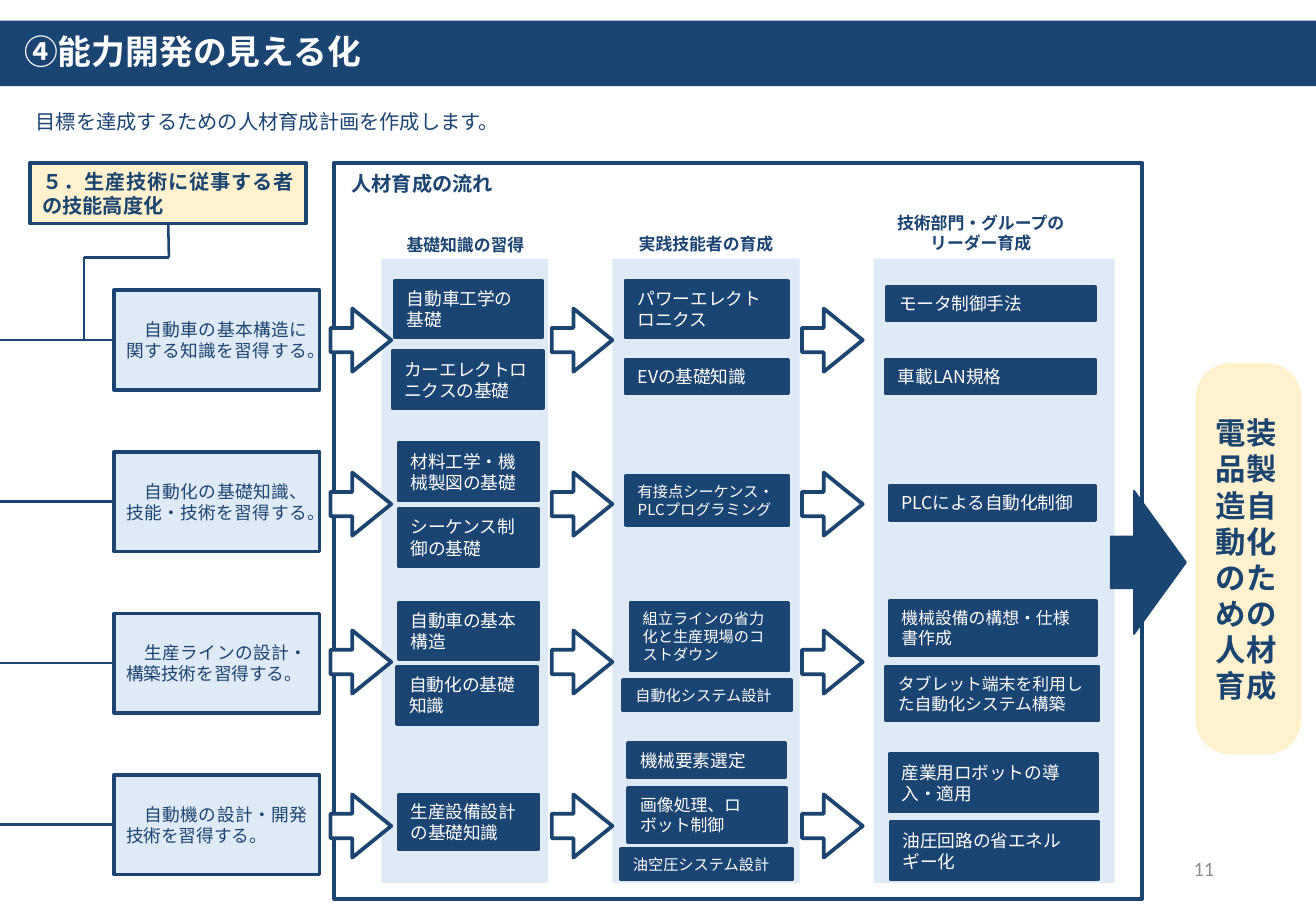
from dataclasses import dataclass
from typing import Any, Optional

from lxml.etree import SubElement
from pptx import Presentation
from pptx.dml.color import RGBColor
from pptx.enum.shapes import MSO_CONNECTOR, MSO_SHAPE
from pptx.enum.text import MSO_ANCHOR, PP_ALIGN
from pptx.oxml.ns import qn
from pptx.shapes.autoshape import Shape
from pptx.shapes.connector import Connector
from pptx.slide import Slide
from pptx.util import Inches, Pt


@dataclass(frozen=True)
class Theme:
    navy: str = "1A4472"
    pale: str = "DEEBF7"
    cream: str = "FFF2CC"
    white: str = "FFFFFF"
    grey: str = "8C8C8C"
    font: str = "Noto Sans CJK JP"
    number_font: str = "Calibri"
    title: float = 20
    outcome: float = 18
    lead: float = 12
    body: float = 10.5
    head: float = 10
    small: float = 9
    leading: float = 1.19
    border: float = 2.25
    wire: float = 1.5


T = Theme()


@dataclass(frozen=True)
class Box:
    x: float
    y: float
    w: float
    h: float


@dataclass(frozen=True)
class Text:
    text: str
    size: float = T.body
    color: str = T.navy
    bold: bool = False
    align: Optional[PP_ALIGN] = None
    anchor: MSO_ANCHOR = MSO_ANCHOR.MIDDLE
    font: str = T.font
    wrap: bool = True


@dataclass(frozen=True)
class Stage:
    band: Box
    head: Box
    title: str


@dataclass(frozen=True)
class Skill:
    box: Box
    text: str
    size: float = T.body


STAGES = [
    Stage(Box(3.14, 2.13, 1.37, 5.14), Box(3.15, 1.88, 1.36, 0.27), "基礎知識の習得"),
    Stage(Box(5.04, 2.13, 1.54, 5.14), Box(5.13, 1.87, 1.36, 0.27), "実践技能者の育成"),
    Stage(Box(7.19, 2.13, 1.98, 5.14), Box(7.21, 1.7, 1.72, 0.44),
          "技術部門・グループの\nリーダー育成"),
]
GOALS = [
    "　自動車の基本構造に関する知識を習得する。",
    "　自動化の基礎知識、技能・技術を習得する。",
    "　生産ラインの設計・構築技術を習得する。",
    "　自動機の設計・開発技術を習得する。",
]
ARROW_X = [2.72, 4.54, 6.6]
ARROW_Y = [2.54, 3.89, 5.19, 6.54]
SKILLS = [
    Skill(Box(3.25, 2.31, 1.21, 0.47), "自動車工学の基礎"),
    Skill(Box(3.23, 2.89, 1.24, 0.47), "カーエレクトロニクスの基礎"),
    Skill(Box(3.28, 3.65, 1.15, 0.47), "材料工学・機械製図の基礎"),
    Skill(Box(3.28, 4.19, 1.15, 0.47), "シーケンス制御の基礎"),
    Skill(Box(3.28, 4.96, 1.15, 0.47), "自動車の基本構造"),
    Skill(Box(3.27, 5.49, 1.15, 0.47), "自動化の基礎知識"),
    Skill(Box(3.28, 6.54, 1.15, 0.45), "生産設備設計の基礎知識"),
    Skill(Box(5.15, 2.31, 1.34, 0.47), "パワーエレクトロニクス"),
    Skill(Box(5.15, 2.96, 1.34, 0.28), "EVの基礎知識"),
    Skill(Box(5.15, 3.92, 1.34, 0.4), "有接点シーケンス・PLCプログラミング", T.small),
    Skill(Box(5.19, 4.96, 1.3, 0.56), "組立ラインの省力化と生産現場のコストダウン", T.small),
    Skill(Box(5.13, 5.6, 1.38, 0.25), "自動化システム設計", T.small),
    Skill(Box(5.17, 6.12, 1.29, 0.28), "機械要素選定"),
    Skill(Box(5.17, 6.49, 1.3, 0.44), "画像処理、ロボット制御", T.head),
    Skill(Box(5.11, 6.99, 1.41, 0.25), "油空圧システム設計", T.small),
    Skill(Box(7.3, 2.36, 1.71, 0.28), "モータ制御手法"),
    Skill(Box(7.29, 2.96, 1.72, 0.28), "車載LAN規格"),
    Skill(Box(7.32, 4, 1.69, 0.28), "PLCによる自動化制御"),
    Skill(Box(7.32, 4.95, 1.7, 0.44), "機械設備の構想・仕様書作成", T.head),
    Skill(Box(7.29, 5.49, 1.75, 0.44), "タブレット端末を利用した自動化システム構築", T.head),
    Skill(Box(7.32, 6.21, 1.71, 0.47), "産業用ロボットの導入・適用"),
    Skill(Box(7.33, 6.77, 1.71, 0.47), "油圧回路の省エネルギー化"),
]


def apply(obj: Any, values: dict[str, Any]) -> None:
    """Set each named attribute on the object."""
    for name, value in values.items():
        setattr(obj, name, value)


def inches(b: Box) -> tuple:
    """Return the box as lengths for a shape call."""
    return Inches(b.x), Inches(b.y), Inches(b.w), Inches(b.h)


def write(sp: Shape, t: Text) -> None:
    """Fill a shape with formatted paragraphs."""
    tf = sp.text_frame
    apply(tf, {"word_wrap": t.wrap, "vertical_anchor": t.anchor})
    for i, line in enumerate(t.text.split("\n")):
        p = tf.add_paragraph() if i else tf.paragraphs[0]
        apply(p, {"alignment": t.align or PP_ALIGN.LEFT,
                  "line_spacing": Pt(t.size * T.leading)})
        r = p.add_run()
        r.text = line
        apply(r.font, {"name": t.font, "size": Pt(t.size), "bold": t.bold})
        r.font.color.rgb = RGBColor.from_string(t.color)
        SubElement(r._r.get_or_add_rPr(), qn("a:ea"), typeface=t.font)


def add_label(s: Slide, b: Box, t: Text) -> Shape:
    """Add a text box."""
    sp = s.shapes.add_textbox(*inches(b))
    write(sp, t)
    return sp


def add_block(s: Slide, b: Box, fill: str, line: float = 0, text: Optional[Text] = None,
              kind: MSO_SHAPE = MSO_SHAPE.RECTANGLE, adj: tuple = ()) -> Shape:
    """Add a filled shape with an optional navy border and text."""
    sp = s.shapes.add_shape(kind, *inches(b))
    sp.shadow.inherit = False
    sp.fill.solid()
    sp.fill.fore_color.rgb = RGBColor.from_string(fill)
    if line:
        sp.line.color.rgb = RGBColor.from_string(T.navy)
        sp.line.width = Pt(line)
    else:
        sp.line.fill.background()
    for i, value in enumerate(adj):
        sp.adjustments[i] = value
    if text:
        write(sp, text)
    return sp


def add_wire(s: Slide, x1: float, y1: float, x2: float, y2: float) -> Connector:
    """Add a straight navy line."""
    c = s.shapes.add_connector(MSO_CONNECTOR.STRAIGHT, *map(Inches, (x1, y1, x2, y2)))
    c.line.color.rgb = RGBColor.from_string(T.navy)
    c.line.width = Pt(T.wire)
    SubElement(c._element.spPr, qn("a:effectLst"))
    return c


def main() -> None:
    """Build the slide and save it."""
    prs = Presentation()
    apply(prs, {"slide_width": Inches(10.83), "slide_height": Inches(7.5)})
    s = prs.slides.add_slide(prs.slide_layouts[6])
    add_block(s, Box(0, 0.17, 10.83, 0.54), T.navy)
    add_label(s, Box(0.1, 0.21, 3.07, 0.45), Text("④能力開発の見える化", T.title, T.white, True,
                                                  anchor=MSO_ANCHOR.TOP, wrap=False))
    add_label(s, Box(0.03, 0.85, 10.46, 0.3),
              Text("　目標を達成するための人材育成計画を作成します。", T.lead))
    add_block(s, Box(2.75, 1.34, 6.65, 6.06), T.white, T.border)
    add_label(s, Box(2.72, 1.36, 1.51, 0.3),
              Text("人材育成の流れ", T.lead, bold=True, align=PP_ALIGN.CENTER))
    for st in STAGES:
        add_block(s, st.band, T.pale)
        add_label(s, st.head, Text(st.title, T.head, bold=True, align=PP_ALIGN.CENTER))
    theme_box = add_block(s, Box(0.25, 1.34, 2.27, 0.5), T.cream, T.border,
                          Text("５．生産技術に従事する者の技能高度化", T.lead, bold=True,
                               align=PP_ALIGN.JUSTIFY))
    add_wire(s, 1.39, 1.84, 1.39, 2.12).begin_connect(theme_box, 2)
    add_wire(s, 1.39, 2.12, 0.69, 2.12)
    add_wire(s, 0.69, 2.12, 0.69, 2.8)
    for i, goal in enumerate(GOALS):
        y = 2.39 + 1.33 * i
        sp = add_block(s, Box(0.94, y, 1.69, 0.82), T.pale, T.border,
                       Text(goal, align=PP_ALIGN.JUSTIFY))
        add_wire(s, 0, y + 0.41, 0.94, y + 0.41).end_connect(sp, 1)
    for y in ARROW_Y:
        for x in ARROW_X:
            add_block(s, Box(x, y, 0.5, 0.52), T.white, T.border,
                      kind=MSO_SHAPE.RIGHT_ARROW, adj=(0.386, 0.641))
    for sk in SKILLS:
        add_block(s, sk.box, T.navy, T.border, Text(sk.text, sk.size, T.white))
    add_block(s, Box(9.14, 4.04, 0.62, 1.18), T.navy, 1,
              kind=MSO_SHAPE.RIGHT_ARROW, adj=(0.363, 0.69))
    add_block(s, Box(9.84, 2.99, 0.87, 3.22), T.cream,
              kind=MSO_SHAPE.ROUNDED_RECTANGLE, adj=(0.327,))
    sp = add_label(s, Box(9.86, 3.17, 0.79, 2.87),
                   Text("電装品製造自動化のための人材育成", T.outcome, bold=True,
                        align=PP_ALIGN.CENTER))
    sp.text_frame._txBody.bodyPr.set("vert", "wordArtVertRtl")
    add_label(s, Box(7.65, 6.95, 2.44, 0.4),
              Text("11", T.lead, T.grey, align=PP_ALIGN.RIGHT, font=T.number_font))
    prs.save("out.pptx")


if __name__ == "__main__":
    main()
